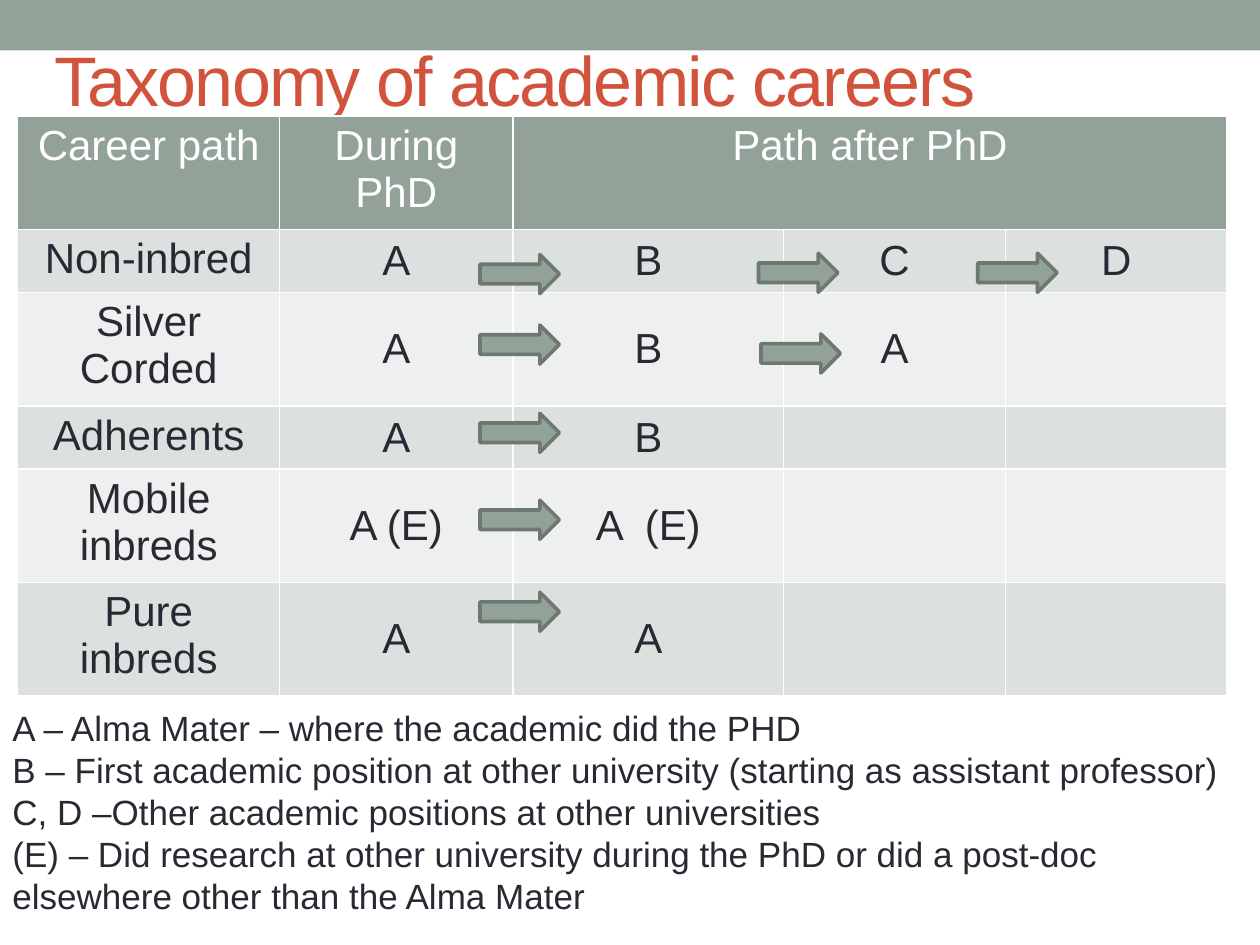
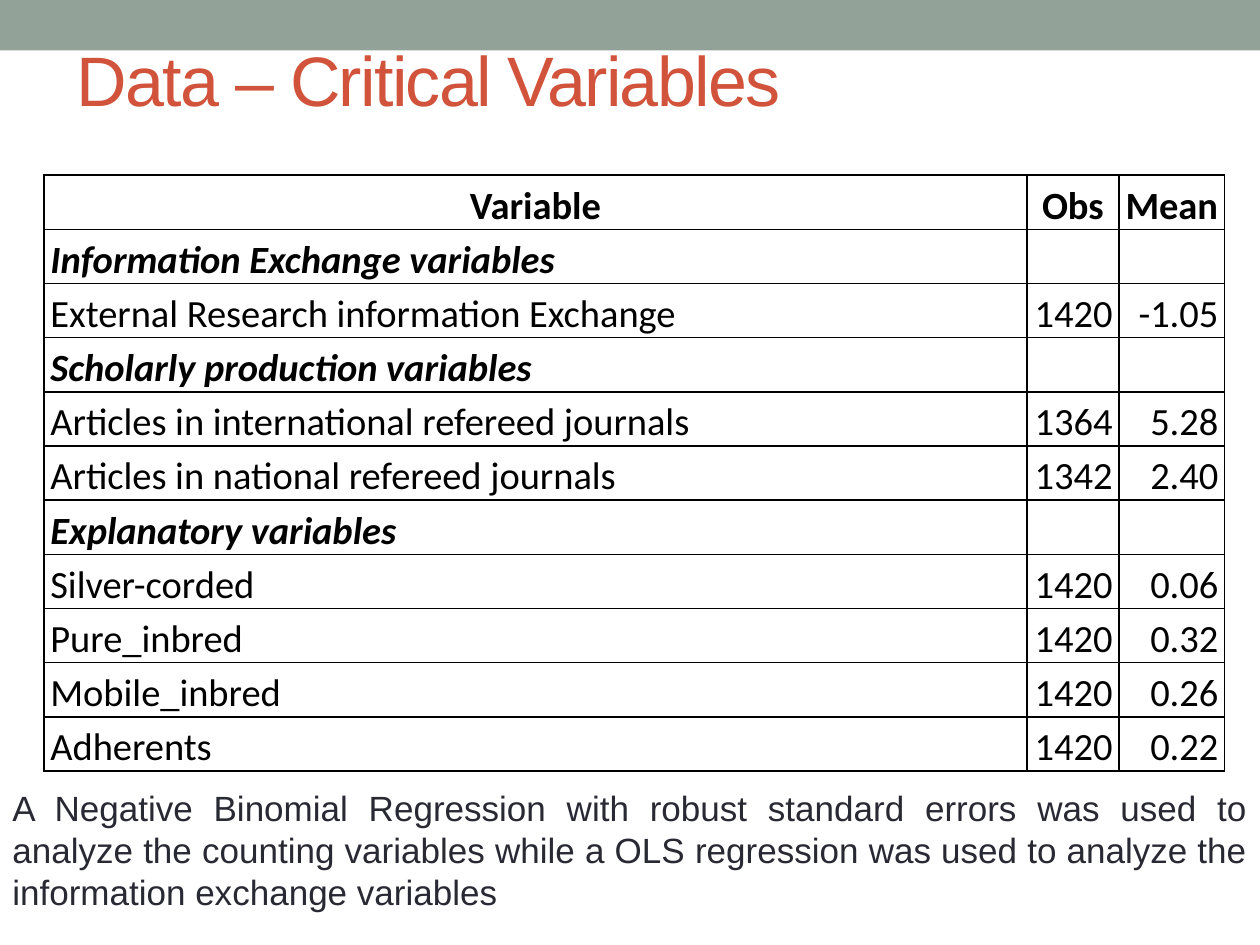
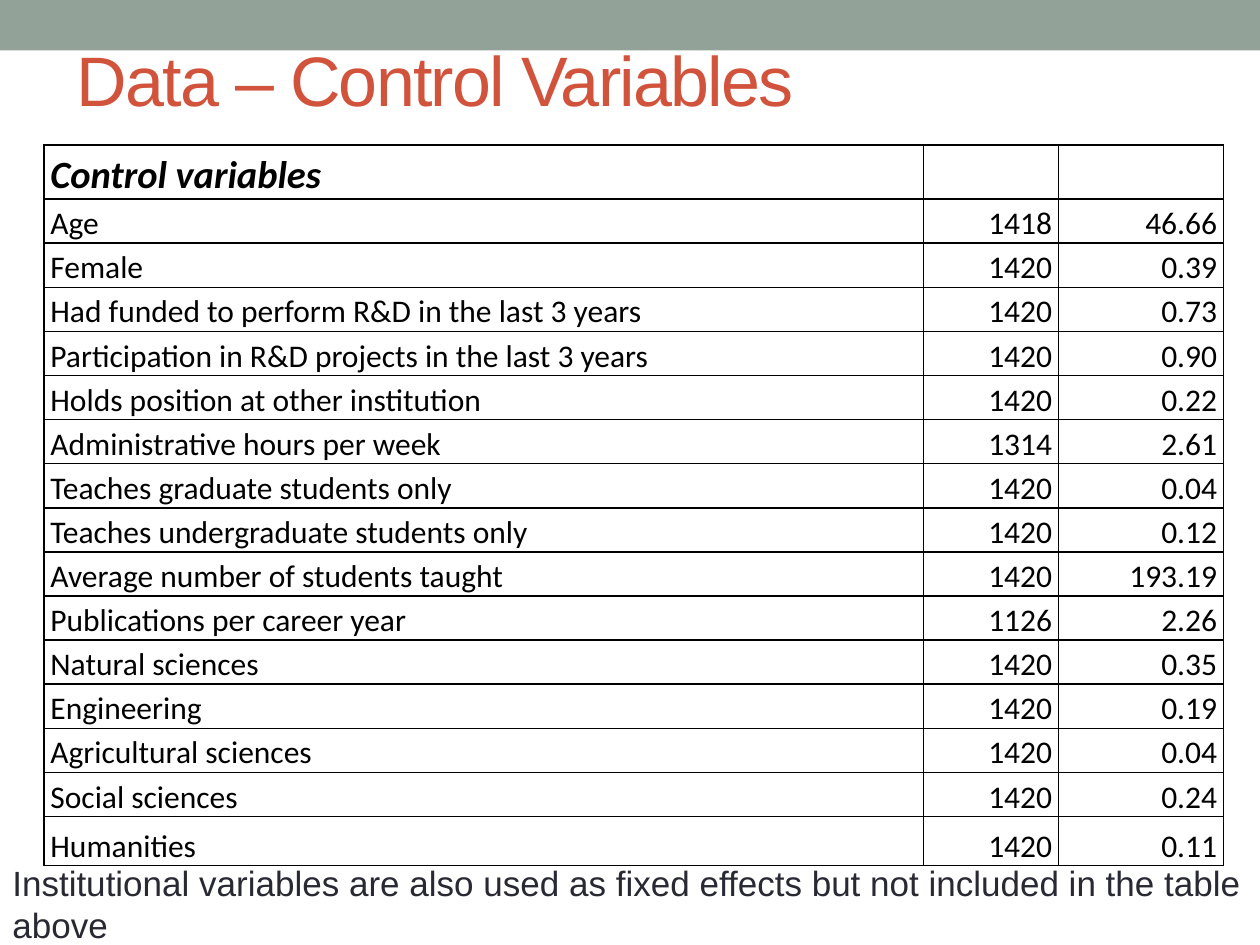
import dataclasses

import pptx
import pptx.dml.color
import pptx.enum.shapes
import pptx.enum.text
import pptx.oxml
import pptx.oxml.ns
import pptx.util

Inches = pptx.util.Inches
Pt = pptx.util.Pt
Color = pptx.dml.color.RGBColor.from_string
Align = pptx.enum.text.PP_ALIGN
Anchor = pptx.enum.text.MSO_ANCHOR
Shape = pptx.enum.shapes.MSO_SHAPE


@dataclasses.dataclass(frozen=True)
class Theme:
    sage: str = "93A299"
    sage_dark: str = "6D7871"
    row_odd: str = "DCE0DE"
    row_even: str = "EEF0EF"
    title: str = "D2533C"
    ink: str = "292934"
    black: str = "000000"
    white: str = "FFFFFF"
    font: str = "Arial"
    data_font: str = "Calibri"
    title_size: int = 40
    career_size: int = 24
    note_size: int = 20
    data_size: int = 22
    small_data_size: int = 18


theme = Theme()


def style_text(text_frame, font, size, color, align=Align.LEFT, bold=False, italic=False):
    for paragraph in text_frame.paragraphs:
        paragraph.alignment = align
        for run in paragraph.runs:
            run.font.name = font
            run.font.size = Pt(size)
            run.font.color.rgb = Color(color)
            run.font.bold = bold
            run.font.italic = italic


def add_plain_table(slide, left, top, widths, heights, border):
    """Add an unbanded table whose cells all have a 1 pt border."""
    table = slide.shapes.add_table(
        len(heights), len(widths), Inches(left), Inches(top),
        Inches(sum(widths)), Inches(sum(heights))).table
    table.first_row = table.horz_banding = False
    for column, width in zip(table.columns, widths):
        column.width = Inches(width)
    for row, height in zip(table.rows, heights):
        row.height = Inches(height)
    for cell in table.iter_cells():
        properties = cell._tc.get_or_add_tcPr()
        for side in ("lnL", "lnR", "lnT", "lnB"):
            properties.append(pptx.oxml.parse_xml(
                f'<a:{side} {pptx.oxml.ns.nsdecls("a")} w="12700"><a:solidFill>'
                f'<a:srgbClr val="{border}"/></a:solidFill></a:{side}>'))
        cell.fill.background()
    return table


presentation = pptx.Presentation()
presentation.slide_width = Inches(10)
presentation.slide_height = Inches(7.5)
title_only = presentation.slide_layouts[5]

# Titles and notes: title, title left, title width, note top, note size, alignment, lines
pages = [
    ("Taxonomy of academic careers", 0.33, 9.55, 5.56, (9.88, 1.78), Align.LEFT, [
        "A – Alma Mater – where the academic did the PHD",
        "B – First academic position at other university (starting as assistant professor)",
        "C, D –Other academic positions at other universities",
        "(E) – Did research at other university during the PhD or did a post-doc "
        "elsewhere other than the Alma Mater"]),
    ("Data – Critical Variables", 0.51, 9, 6.19, (10, 1.11), Align.JUSTIFY, [
        "A Negative Binomial Regression with robust standard errors was used to analyze "
        "the counting variables while a OLS regression was used to analyze the "
        "information exchange variables"]),
    ("Data – Control Variables", 0.51, 9, 6.79, (10, 0.44), Align.LEFT, [
        "Institutional variables are also used as fixed effects but not included in the "
        "table above"]),
]
for title_text, title_left, title_width, note_top, note_size, note_align, lines in pages:
    slide = presentation.slides.add_slide(title_only)
    title = slide.shapes.title
    title.left, title.top = Inches(title_left), Inches(0)
    title.width, title.height = Inches(title_width), Inches(1.25)
    title.text_frame.text = title_text
    title.text_frame.vertical_anchor = Anchor.MIDDLE
    title.text_frame.auto_size = pptx.enum.text.MSO_AUTO_SIZE.NONE
    style_text(title.text_frame, theme.font, theme.title_size, theme.title)
    title.text_frame.paragraphs[0].runs[0].font._element.set("spc", "-100")

    note = slide.shapes.add_textbox(
        Inches(0), Inches(note_top), Inches(note_size[0]), Inches(note_size[1]))
    note.text_frame.word_wrap = True
    note.text_frame.text = "\n".join(lines)
    style_text(note.text_frame, theme.font, theme.note_size, theme.ink, note_align)

careers_slide, critical_slide, control_slide = presentation.slides

# The top band belongs to the layout, so every slide shows it
band = careers_slide.shapes.add_shape(
    Shape.RECTANGLE, Inches(0), Inches(0), Inches(10), Inches(0.4))
band.shadow.inherit = False
band.fill.solid()
band.fill.fore_color.rgb = Color(theme.sage)
band.line.fill.background()
title_only.shapes._spTree.insert(2, band._element)

# Slide 1: career paths
careers = [
    ("Career path", "During PhD", "Path after PhD", "", ""),
    ("Non-inbred", "A", "B", "C", "D"),
    ("Silver Corded", "A", "B", "A", ""),
    ("Adherents", "A", "B", "", ""),
    ("Mobile inbreds", "A (E)", "A  (E)", "", ""),
    ("Pure inbreds", "A", "A", "", ""),
]
one_line, two_lines = 0.47, 0.84
table = add_plain_table(
    careers_slide, 0.14, 0.92, [2.08, 1.85, 2.15, 1.76, 1.76],
    [two_lines, one_line, two_lines, one_line, two_lines, two_lines], theme.white)
table.cell(0, 2).merge(table.cell(0, 4))
for row_index, career in enumerate(careers):
    is_header = row_index == 0
    row_fill = theme.sage if is_header else (theme.row_even, theme.row_odd)[row_index % 2]
    for column_index, text in enumerate(career):
        cell = table.cell(row_index, column_index)
        cell.fill.solid()
        cell.fill.fore_color.rgb = Color(row_fill)
        cell.text_frame.text = text
        if not is_header and column_index > 0:
            cell.vertical_anchor = Anchor.MIDDLE
        style_text(cell.text_frame, theme.font, theme.career_size,
                   theme.white if is_header else theme.ink, Align.CENTER)

first_moves = [(3.81, top) for top in (4.7, 3.97, 3.28, 2.58, 2.02)]
later_moves = [(6.04, 2.65), (7.76, 2.01), (6.02, 2.01)]
for left, top in first_moves + later_moves:
    arrow = careers_slide.shapes.add_shape(
        Shape.RIGHT_ARROW, Inches(left), Inches(top), Inches(0.63), Inches(0.31))
    arrow.shadow.inherit = False
    arrow.fill.solid()
    arrow.fill.fore_color.rgb = Color(theme.sage)
    arrow.line.color.rgb = Color(theme.sage_dark)
    arrow.line.width = Pt(2.08)

# Slides 2 and 3: variables with observations and means; a row without numbers is a heading
critical_variables = [
    ("Variable", "Obs", "Mean"),
    ("Information Exchange variables", "", ""),
    ("External Research information Exchange", "1420", "-1.05"),
    ("Scholarly production variables", "", ""),
    ("Articles in international refereed journals", "1364", "5.28"),
    ("Articles in national refereed journals", "1342", "2.40"),
    ("Explanatory variables", "", ""),
    ("Silver-corded", "1420", "0.06"),
    ("Pure_inbred", "1420", "0.32"),
    ("Mobile_inbred", "1420", "0.26"),
    ("Adherents", "1420", "0.22"),
]
control_variables = [
    ("Control variables", "", ""),
    ("Age", "1418", "46.66"),
    ("Female", "1420", "0.39"),
    ("Had funded to perform R&D in the last 3 years", "1420", "0.73"),
    ("Participation in R&D projects in the last 3 years", "1420", "0.90"),
    ("Holds position at other institution", "1420", "0.22"),
    ("Administrative hours per week", "1314", "2.61"),
    ("Teaches graduate students only", "1420", "0.04"),
    ("Teaches undergraduate students only", "1420", "0.12"),
    ("Average number of students taught", "1420", "193.19"),
    ("Publications per career year", "1126", "2.26"),
    ("Natural sciences", "1420", "0.35"),
    ("Engineering", "1420", "0.19"),
    ("Agricultural sciences", "1420", "0.04"),
    ("Social sciences", "1420", "0.24"),
    ("Humanities", "1420", "0.11"),
]
data_tables = [
    (critical_slide, 1.39, [7.8, 0.73, 0.84], [0.43] * 11,
     theme.data_size, critical_variables),
    (control_slide, 1.15, [6.98, 1.07, 1.31], [0.43] + [0.35] * 14 + [0.39],
     theme.small_data_size, control_variables),
]
for slide, top, widths, heights, value_size, variables in data_tables:
    table = add_plain_table(slide, 0.35, top, widths, heights, theme.black)
    for row_index, variable in enumerate(variables):
        is_header = variable[1] == "Obs"
        is_heading = variable[1] == ""
        for column_index, text in enumerate(variable):
            cell = table.cell(row_index, column_index)
            cell.margin_left = cell.margin_right = Inches(0.05)
            cell.margin_top = cell.margin_bottom = 0
            cell.vertical_anchor = Anchor.BOTTOM
            cell.text_frame.text = text
            cell.text_frame.paragraphs[0].line_spacing = 1.15
            align = Align.CENTER if is_header else Align.RIGHT if column_index else Align.LEFT
            style_text(cell.text_frame, theme.data_font,
                       theme.data_size if is_heading else value_size, theme.black, align,
                       bold=is_header or is_heading, italic=is_heading)

presentation.save("out.pptx")
